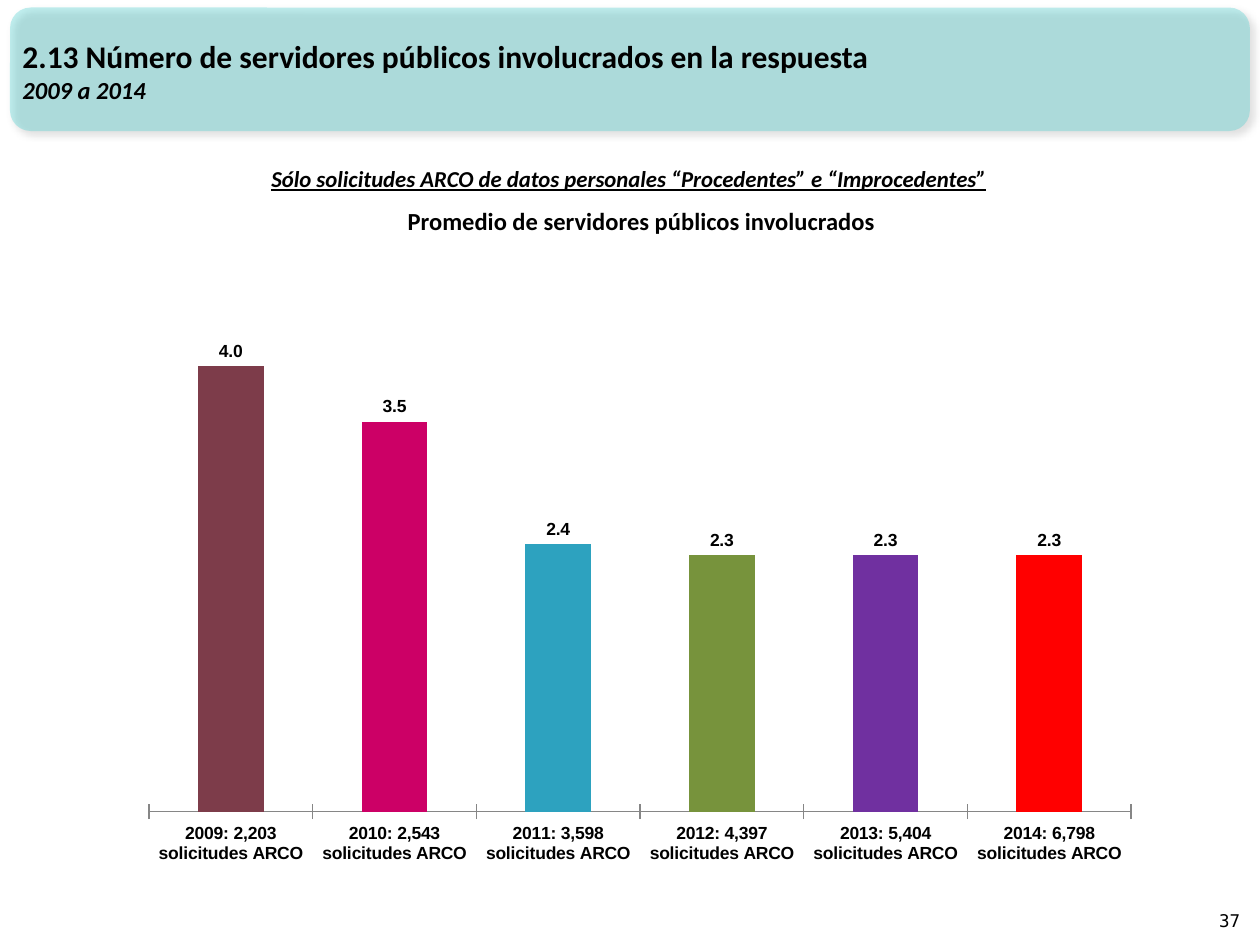
from lxml import etree
from pptx import Presentation, util as u
from pptx.chart.data import CategoryChartData
from pptx.dml.color import RGBColor
from pptx.enum import chart as ch, shapes, text
from pptx.oxml import parse_xml
from pptx.oxml.ns import nsdecls, qn

WIDTH, HEIGHT = 10, 7.5
BLACK = "000000"
REQUESTS = {2009: "2,203", 2010: "2,543", 2011: "3,598",
            2012: "4,397", 2013: "5,404", 2014: "6,798"}
AVERAGES = [4.0, 3.5, 2.4, 2.3, 2.3, 2.3]
BAR_COLORS = ["7D3C4A", "CC0066", "2DA2BF", "77933C", "7030A0", "FF0000"]
ALIGN, ANCHOR = text.PP_ALIGN, text.MSO_ANCHOR


def inches(box):
    """Turn a box in inches into lengths."""
    return [u.Inches(side) for side in box]


def paint(target, color):
    """Give a fill a solid colour."""
    target.fill.solid()
    target.fill.fore_color.rgb = RGBColor.from_string(color)


def style(font, size, name="Calibri", bold=True, italic=False, underline=False):
    """Format a font in black."""
    font.size, font.name = u.Pt(size), name
    font.bold, font.italic, font.underline = bold, italic, underline
    font.color.rgb = RGBColor.from_string(BLACK)


def write(slide, box, lines, align=ALIGN.LEFT, anchor=ANCHOR.TOP):
    """Write lines of (text, format) in a box."""
    frame = slide.shapes.add_textbox(*inches(box)).text_frame
    frame.word_wrap, frame.vertical_anchor = True, anchor
    for number, (words, look) in enumerate(lines):
        line = frame.add_paragraph() if number else frame.paragraphs[0]
        line.alignment = align
        run = line.add_run()
        run.text = words
        style(run.font, **look)


def banner(slide, box):
    """Draw the translucent heading panel with its title and period."""
    panel = slide.shapes.add_shape(
        shapes.MSO_SHAPE.ROUNDED_RECTANGLE, *inches(box))
    paint(panel, "33CCCC")
    panel.line.fill.background()
    tint = panel._element.spPr.find(qn("a:solidFill"))[0]
    etree.SubElement(tint, qn("a:alpha")).set("val", "30000")
    panel._element.spPr.append(parse_xml(
        f'<a:effectLst {nsdecls("a")}><a:outerShdw blurRad="{u.Pt(4)}" '
        f'dist="{u.Pt(3)}" dir="2700000" algn="tl" rotWithShape="0">'
        f'<a:srgbClr val="{BLACK}"><a:alpha val="40000"/></a:srgbClr>'
        '</a:outerShdw></a:effectLst>'))
    left, top, width, height = box
    write(slide, (left, top + 0.03, width, height - 0.04), [
        ("2.13 Número de servidores públicos involucrados en la respuesta",
         dict(size=18)),
        ("2009 a 2014", dict(size=14, italic=True))], anchor=ANCHOR.MIDDLE)


def headings(slide, box):
    """Stack the scope note and the chart heading, centred."""
    left, top, width, height = box
    row = height / 2
    write(slide, (left, top, width, row), [
        ("Sólo solicitudes ARCO de datos personales “Procedentes” e “Improcedentes”",
         dict(size=13, italic=True, underline=True))], ALIGN.CENTER)
    write(slide, (left + 0.1, top + row, width, row), [
        ("Promedio de servidores públicos involucrados", dict(size=14))],
        ALIGN.CENTER)


def averages_chart(slide, box):
    """Chart the average number of public servants by year."""
    data = CategoryChartData(number_format="0.0")
    data.categories = [f"{year}: {count} solicitudes ARCO"
                       for year, count in REQUESTS.items()]
    data.add_series("Promedio", AVERAGES)
    chart = slide.shapes.add_chart(
        ch.XL_CHART_TYPE.COLUMN_CLUSTERED, *inches(box), data).chart
    chart.has_legend = chart.has_title = False
    style(chart.font, 10, "Arial")

    years, scale = chart.category_axis, chart.value_axis
    years.major_tick_mark = ch.XL_TICK_MARK.CROSS
    years.format.line.color.rgb = RGBColor.from_string("868686")
    scale.minimum_scale, scale.maximum_scale, scale.major_unit = 0, 5, 1
    scale.has_major_gridlines = scale.visible = False

    plot = chart.plots[0]
    plot.gap_width, plot.overlap, plot.vary_by_categories = 150, -25, False
    for number, color in enumerate(BAR_COLORS):
        paint(plot.series[0].points[number].format, color)
    plot.has_data_labels = True
    labels = plot.data_labels
    labels.show_value = True
    labels.number_format, labels.number_format_is_linked = "0.0", False
    labels.position = ch.XL_LABEL_POSITION.OUTSIDE_END
    style(labels.font, 10, "Arial")

    area = chart._chartSpace.chart.plotArea
    for old in area.findall(qn("c:layout")):
        area.remove(old)
    shares = dict(x=0.02, y=0.03, w=0.96, h=0.87)
    area.insert(0, parse_xml(
        f'<c:layout {nsdecls("c")}><c:manualLayout>'
        '<c:layoutTarget val="inner"/><c:xMode val="edge"/><c:yMode val="edge"/>'
        + "".join(f'<c:{side} val="{share}"/>' for side, share in shares.items())
        + '</c:manualLayout></c:layout>'))


def page_number(slide, box):
    """Place the page number in its corner."""
    write(slide, box, [("37", dict(size=10, name="DejaVu Sans Mono", bold=False))],
          ALIGN.RIGHT, ANCHOR.BOTTOM)


def main():
    """Build and save the slide."""
    deck = Presentation()
    deck.slide_width, deck.slide_height = inches((WIDTH, HEIGHT))
    slide = deck.slides.add_slide(deck.slide_layouts[6])
    banner(slide, (0.08, 0.06, WIDTH - 0.16, 0.98))
    page_number(slide, (9.54, 7.04, 0.4, 0.4))
    headings(slide, (1.52, 1.26, 6.94, 0.65))
    averages_chart(slide, (1.02, 1.87, 8.12, 5.08))
    deck.save("out.pptx")


if __name__ == "__main__":
    main()
